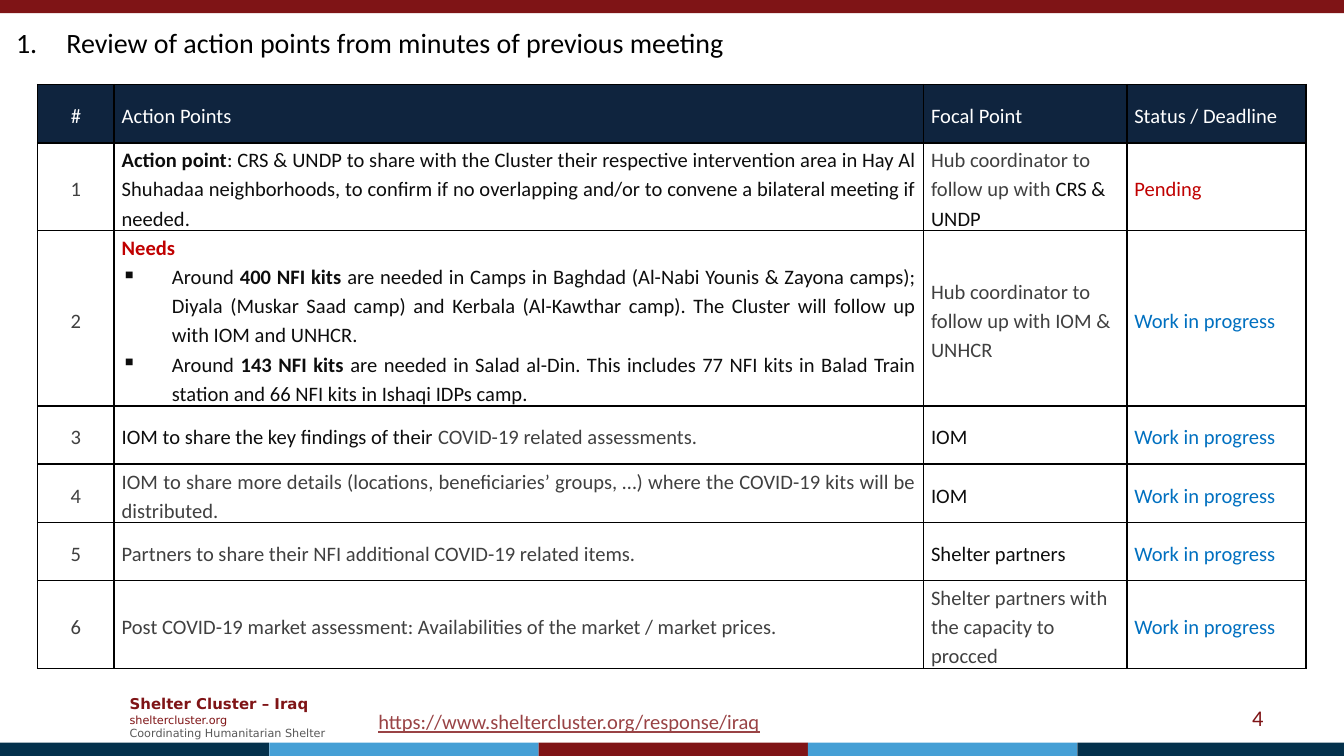
from dataclasses import dataclass

from lxml import etree
from pptx import Presentation
from pptx import util as u
from pptx.dml.color import RGBColor
from pptx.enum import shapes, text
from pptx.oxml import ns

Cm, Pt = u.Cm, u.Pt
ALIGN, ANCHOR = text.PP_ALIGN, text.MSO_ANCHOR


@dataclass(frozen=True)
class Theme:
    maroon: str = "7F1416"
    navy: str = "04314C"
    sky: str = "459FD5"
    header: str = "0F243E"
    white: str = "FFFFFF"
    black: str = "000000"
    ink: str = "0D0D0D"
    grey: str = "404040"
    tagline: str = "595959"
    link: str = "994345"
    red: str = "C00000"
    blue: str = "0070C0"
    body_font: str = "Calibri"
    mark_font: str = "DejaVu Sans"
    title_size: int = 15
    number_size: int = 12
    body_size: int = 11
    mark_size: int = 8
    small_size: int = 6


T = Theme()
INDENT = Cm(0.95)
COLUMNS = (1.45, 15.29, 3.84, 3.38)
COLUMN_ALIGN = (ALIGN.CENTER, ALIGN.JUSTIFY, ALIGN.LEFT, ALIGN.JUSTIFY)
ROWS = (1.1, 1.66, 3.32, 1.1, 1.1, 1.1, 1.66)
HEADINGS = ("#", "Action Points", "Focal Point", "Status / Deadline")
PENDING = ("Pending", T.red)
ONGOING = ("Work in progress", T.blue)

ACTIONS = [
    ([[("Action point", T.ink, True),
       (": CRS & UNDP to share with the Cluster their respective intervention area in Hay Al "
        "Shuhadaa neighborhoods, to confirm if no overlapping and/or to convene a bilateral "
        "meeting if needed.", T.ink)]],
     [("Hub coordinator to follow up with ", T.grey), ("CRS & UNDP", T.ink)], PENDING),
    ([[("Needs", T.red, True)],
      [("Around ", T.ink), ("400 NFI kits", T.ink, True),
       (" are needed in Camps in Baghdad (Al-Nabi Younis & Zayona camps); Diyala (Muskar Saad "
        "camp) and Kerbala (Al-Kawthar camp). The Cluster will follow up with IOM and UNHCR.",
        T.ink)],
      [("Around ", T.ink), ("143 NFI kits", T.ink, True),
       (" are needed in Salad al-Din. This includes 77 NFI kits in Balad Train station and "
        "66 NFI kits in Ishaqi IDPs camp.", T.ink)]],
     [("Hub coordinator to follow up with IOM & UNHCR", T.grey)], ONGOING),
    ([[("IOM to share the key findings of their ", T.ink),
       ("COVID-19 related assessments.", T.grey)]],
     [("IOM", T.ink)], ONGOING),
    ([[("IOM to share more details (locations, beneficiaries’ groups, …) where the COVID-19 "
        "kits will be distributed.", T.grey)]],
     [("IOM", T.ink)], ONGOING),
    ([[("Partners to share their NFI additional COVID-19 related items.", T.grey)]],
     [("Shelter partners", T.ink)], ONGOING),
    ([[("Post COVID-19 market assessment: Availabilities of the market / market prices.",
        T.grey)]],
     [("Shelter partners with the capacity to procced", T.grey)], ONGOING),
]


def apply(target, values):
    for name, value in values.items():
        setattr(target, name, value)


def add_run(paragraph, words, color, bold=False, size=T.body_size, font=T.body_font,
            underline=False):
    run = paragraph.add_run()
    run.text = words
    apply(run.font, {"name": font, "size": Pt(size), "bold": bold, "underline": underline})
    run.font.color.rgb = RGBColor.from_string(color)


def add_bullet(paragraph, tag, **attributes):
    properties = paragraph._p.get_or_add_pPr()
    properties.set("marL", str(INDENT))
    properties.set("indent", str(-INDENT))
    etree.SubElement(properties, ns.qn(tag), attributes)


def paragraphs(frame, count):
    return [frame.paragraphs[0]] + [frame.add_paragraph() for _ in range(count - 1)]


def add_band(slide, left, top, width, height, color):
    band = slide.shapes.add_shape(shapes.MSO_SHAPE.RECTANGLE, left, top, width, height)
    band.shadow.inherit = False
    band.fill.solid()
    band.fill.fore_color.rgb = RGBColor.from_string(color)
    band.line.fill.background()


def add_footer_stripe(slide, left, top, width, height):
    colors = (T.navy, T.sky, T.maroon, T.sky, T.navy)
    step = width // len(colors)
    for i, color in enumerate(colors):
        add_band(slide, left + i * step, top, step, height, color)


def add_label(slide, left, top, width, height, lines, align=ALIGN.LEFT,
              anchor=ANCHOR.MIDDLE, wrap=True):
    frame = slide.shapes.add_textbox(left, top, width, height).text_frame
    apply(frame, {"word_wrap": wrap, "vertical_anchor": anchor})
    for paragraph, line in zip(paragraphs(frame, len(lines)), lines):
        paragraph.alignment = align
        add_run(paragraph, **line)


def add_footer(slide, left, top, width, height):
    mark = {"font": T.mark_font}
    add_label(slide, left, top, Cm(4.39), height, [
        {"words": "Shelter Cluster – Iraq", "color": T.maroon, "bold": True,
         "size": T.mark_size, **mark},
        {"words": "sheltercluster.org", "color": T.maroon, "size": T.small_size, **mark},
        {"words": "Coordinating Humanitarian Shelter", "color": T.tagline,
         "size": T.small_size, **mark}])
    add_label(slide, left + Cm(4.7), top + Cm(0.28), Cm(7.85), Cm(0.74), [
        {"words": "https://www.sheltercluster.org/response/iraq", "color": T.link,
         "underline": True}], anchor=ANCHOR.TOP, wrap=False)
    number_width = Cm(5.92)
    add_label(slide, left + width - number_width, top + Cm(0.18), number_width, Cm(0.76), [
        {"words": "4", "color": T.maroon, "size": T.number_size}], align=ALIGN.RIGHT)


def add_title(slide, left, top, width, height):
    title = slide.shapes.title
    apply(title, {"left": left, "top": top, "width": width, "height": height})
    apply(title.text_frame, {"vertical_anchor": ANCHOR.TOP, "word_wrap": True,
                             "auto_size": text.MSO_AUTO_SIZE.NONE})
    heading = title.text_frame.paragraphs[0]
    heading.alignment = ALIGN.LEFT
    add_bullet(heading, "a:buAutoNum", type="arabicPeriod")
    add_run(heading, "Review of action points from minutes of previous meeting", T.black,
            size=T.title_size)


def add_borders(cell):
    properties = cell._tc.get_or_add_tcPr()
    for position, side in enumerate(("a:lnL", "a:lnR", "a:lnT", "a:lnB")):
        line = etree.Element(ns.qn(side), w=str(Pt(1)))
        fill = etree.SubElement(line, ns.qn("a:solidFill"))
        etree.SubElement(fill, ns.qn("a:srgbClr"), val=T.black)
        properties.insert(position, line)


def fill_cell(cell, lines, align, fill=None):
    apply(cell, {"margin_left": Cm(0.14), "margin_right": Cm(0.14), "margin_top": Cm(0.03),
                 "margin_bottom": 0, "vertical_anchor": ANCHOR.MIDDLE})
    if fill:
        cell.fill.solid()
        cell.fill.fore_color.rgb = RGBColor.from_string(fill)
    else:
        cell.fill.background()
    add_borders(cell)
    for i, (paragraph, runs) in enumerate(zip(paragraphs(cell.text_frame, len(lines)), lines)):
        apply(paragraph, {"alignment": align, "line_spacing": 1.15})
        if i:
            add_bullet(paragraph, "a:buChar", char="▪")
        for run in runs:
            add_run(paragraph, *run)


def add_action_table(slide, left, top, width, height):
    table = slide.shapes.add_table(len(ROWS), len(COLUMNS), left, top, width, height).table
    apply(table, {"first_row": False, "horz_banding": False})
    for column, share in zip(table.columns, COLUMNS):
        column.width = int(width * share / sum(COLUMNS))
    for row, share in zip(table.rows, ROWS):
        row.height = int(height * share / sum(ROWS))
    for c, heading in enumerate(HEADINGS):
        fill_cell(table.cell(0, c), [[(heading, T.white)]], COLUMN_ALIGN[c], T.header)
    for r, (action, focal_point, status) in enumerate(ACTIONS, 1):
        contents = ([[(str(r), T.grey)]], action, [focal_point], [[status]])
        for c, lines in enumerate(contents):
            fill_cell(table.cell(r, c), lines, COLUMN_ALIGN[c])


def main():
    deck = Presentation()
    apply(deck, {"slide_width": Cm(25.4), "slide_height": Cm(14.29)})
    slide = deck.slides.add_slide(deck.slide_layouts[5])
    add_band(slide, 0, 0, deck.slide_width, Cm(0.25), T.maroon)
    add_footer_stripe(slide, 0, Cm(14.04), Cm(25.45), Cm(0.25))
    add_footer(slide, Cm(2.2), Cm(13), Cm(21.93), Cm(1.12))
    add_title(slide, Cm(0.05), Cm(0.36), Cm(25.27), Cm(0.89))
    add_action_table(slide, Cm(0.71), Cm(1.6), Cm(23.97), Cm(11.04))
    deck.save("out.pptx")


if __name__ == "__main__":
    main()
